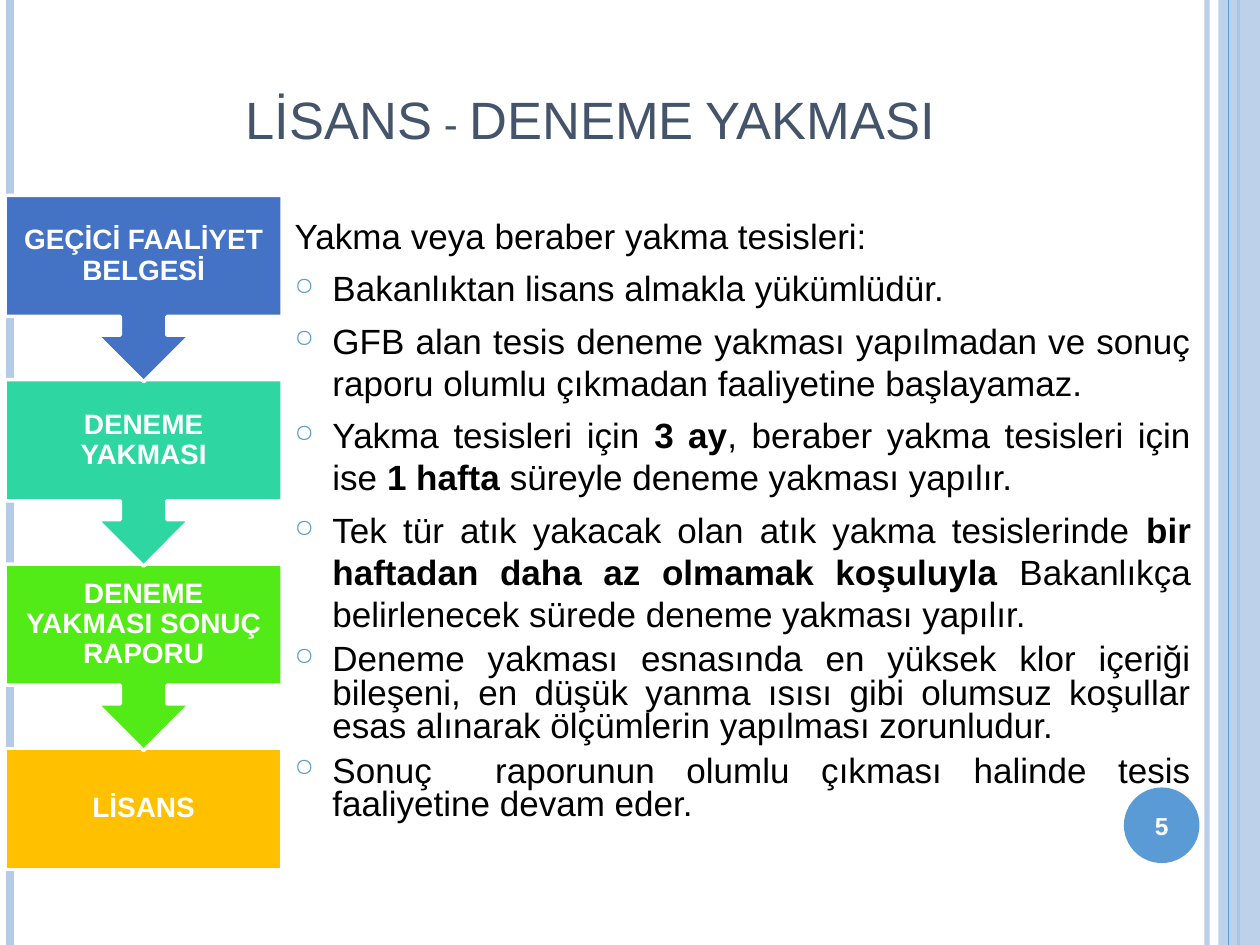
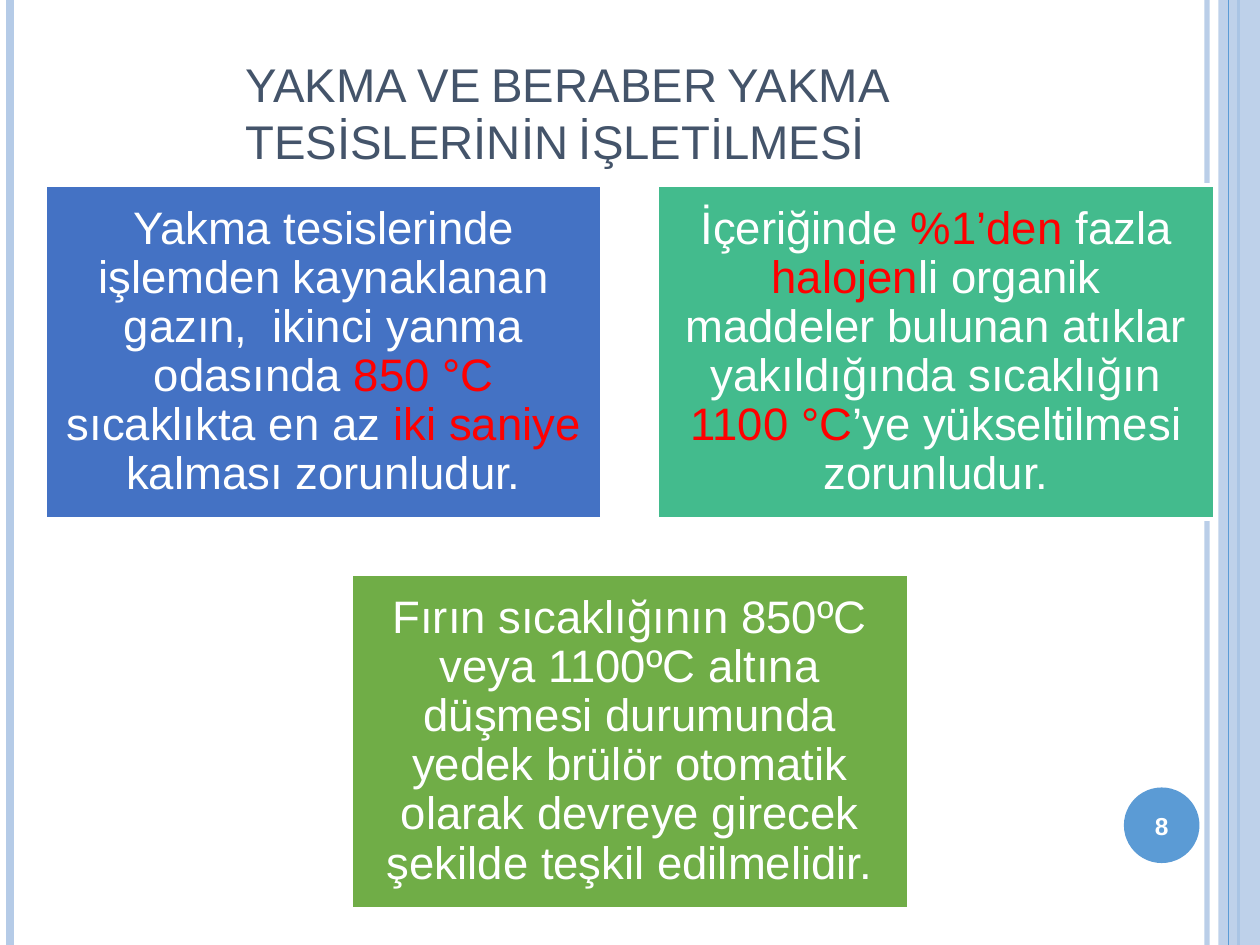
"""Builds two slides on the licensing and running of waste incineration plants."""
from lxml.etree import SubElement
from pptx import Presentation
from pptx.dml.color import RGBColor as Rgb
from pptx.enum.shapes import MSO_CONNECTOR as Conn, MSO_SHAPE as Kind
from pptx.enum.text import MSO_ANCHOR as Anchor, PP_ALIGN as Align
from pptx.oxml.ns import qn
from pptx.util import Inches, Pt

WHITE = Rgb(0xFF, 0xFF, 0xFF)
BLACK = Rgb(0, 0, 0)
RED = Rgb(0xFF, 0, 0)
SLATE = Rgb(0x44, 0x54, 0x6A)
PALE = Rgb(0xB5, 0xCB, 0xE7)
SKY = Rgb(0x5B, 0x9B, 0xD5)
BLUE = Rgb(0x44, 0x72, 0xC4)
MINT = Rgb(0x2E, 0xD7, 0xA1)
LIME = Rgb(0x53, 0xEB, 0x17)
GOLD = Rgb(0xFF, 0xC0, 0x00)
TEAL = Rgb(0x43, 0xBB, 0x8D)
GREEN = Rgb(0x70, 0xAD, 0x47)
FONT = "Arial"
WIDE, HIGH = 10, 7.5

TRIAL = "LİSANS - DENEME YAKMASI"
STEPS = [
    ("GEÇİCİ FAALİYET BELGESİ", BLUE),
    ("DENEME YAKMASI", MINT),
    ("DENEME YAKMASI SONUÇ RAPORU", LIME),
    ("LİSANS", GOLD),
]
LEAD = "Yakma veya beraber yakma tesisleri:"
RULES = [
    (1, ["Bakanlıktan lisans almakla yükümlüdür."]),
    (1, ["GFB alan tesis deneme yakması yapılmadan ve sonuç raporu olumlu "
         "çıkmadan faaliyetine başlayamaz."]),
    (1, ["Yakma tesisleri için ", "3 ay", ", beraber yakma tesisleri için ise ",
         "1 hafta ", "süreyle deneme yakması yapılır."]),
    (1, ["Tek tür atık yakacak olan atık yakma tesislerinde ",
         "bir haftadan daha az olmamak koşuluyla",
         " Bakanlıkça belirlenecek sürede deneme yakması yapılır."]),
    (0.8, ["Deneme yakması esnasında en yüksek klor içeriği bileşeni, en düşük "
           "yanma ısısı gibi olumsuz koşullar esas alınarak ölçümlerin "
           "yapılması zorunludur."]),
    (0.8, ["Sonuç  raporunun olumlu çıkması halinde tesis faaliyetine devam eder."]),
]

RUNNING = "YAKMA VE BERABER YAKMA TESİSLERİNİN İŞLETİLMESİ"
CARDS = [
    (BLUE, ["Yakma tesislerinde işlemden kaynaklanan gazın,  ikinci yanma odasında ",
            "850 °C", " sıcaklıkta en az ", "iki saniye ", "kalması zorunludur."]),
    (TEAL, ["İçeriğinde ", "%1’den ", "fazla ", "halojen",
            "li organik maddeler bulunan atıklar yakıldığında sıcaklığın ",
            "1100 °C", "’ye yükseltilmesi zorunludur."]),
    (GREEN, ["Fırın sıcaklığının 850ºC veya 1100ºC altına düşmesi durumunda yedek "
             "brülör otomatik olarak devreye girecek şekilde teşkil edilmelidir."]),
]


def fade(part, share):
    """Make the solid colour inside a part partly clear."""
    tone = next(part._element.spPr.iter(qn("a:srgbClr")))
    SubElement(tone, qn("a:alpha"), val=str(share * 1000))


def add_run(para, text, size, tone, bold=False):
    """Add one run of text."""
    run = para.add_run()
    run.text = text
    font = run.font
    font.name, font.size, font.bold = FONT, Pt(size), bold
    font.color.rgb = tone
    return run


def add_box(slide, kind, spot, fill, edge=None):
    """Add a filled shape."""
    box = slide.shapes.add_shape(kind, *map(Inches, spot))
    box.shadow.inherit = False
    box.fill.solid()
    box.fill.fore_color.rgb = fill
    if edge:
        box.line.color.rgb = edge
        box.line.width = Pt(2)
    else:
        box.line.fill.background()
    return box


def set_pad(frame, pad):
    """Wrap and centre the text of a frame, with one inset on all sides."""
    frame.word_wrap = True
    frame.vertical_anchor = Anchor.MIDDLE
    frame.margin_left = frame.margin_right = Inches(pad)
    frame.margin_top = frame.margin_bottom = Inches(pad)
    para = frame.paragraphs[0]
    para.alignment = Align.CENTER
    return para


def add_line(slide, left, tone, width):
    """Add a line down the full height of the slide."""
    x = Inches(left)
    line = slide.shapes.add_connector(Conn.STRAIGHT, x, 0, x, Inches(HIGH))
    line.line.color.rgb = tone
    line.line.width = Pt(width)
    SubElement(line._element.spPr, qn("a:effectLst"))
    return line


def add_base(deck, title, top, size, number):
    """Add a slide with its bands, number and title."""
    slide = deck.slides.add_slide(deck.slide_layouts[6])
    fade(add_line(slide, 9.58, PALE, 3), 93)
    add_line(slide, 0.08, PALE, 4.5)
    add_line(slide, 9.83, SKY, 1.5)
    fade(add_box(slide, Kind.RECTANGLE, (9.67, 0, 0.33, HIGH), PALE), 87)
    add_line(slide, 9.75, SKY, 0.75)
    disc = add_box(slide, Kind.OVAL, (8.92, 6.25, 0.6, 0.6), SKY)
    add_run(set_pad(disc.text_frame, 0), number, 14, WHITE, True)
    spot = map(Inches, (1.85, top, 6.82, 0.95))
    frame = slide.shapes.add_textbox(*spot).text_frame
    frame.word_wrap = True
    frame.vertical_anchor = Anchor.BOTTOM
    run = add_run(frame.paragraphs[0], title, size, SLATE)
    run.font._element.set("cap", "small")
    return slide


def add_mark(para):
    """Give a paragraph a hanging ring bullet."""
    props = para._p.get_or_add_pPr()
    props.set("marL", str(Inches(0.3)))
    props.set("indent", str(Inches(-0.3)))
    tone = SubElement(props, qn("a:buClr"))
    SubElement(tone, qn("a:srgbClr"), val=str(SKY))
    SubElement(props, qn("a:buSzPct"), val="70000")
    SubElement(props, qn("a:buChar"), char="○")


def add_rules(slide):
    """Add the lead line and the bulleted rules."""
    spot = map(Inches, (2.24, 1.65, 7.31, 5.01))
    frame = slide.shapes.add_textbox(*spot).text_frame
    frame.word_wrap = True
    add_run(frame.paragraphs[0], LEAD, 20, BLACK)
    for gap, parts in RULES:
        para = frame.add_paragraph()
        para.alignment = Align.JUSTIFY
        para.line_spacing = gap
        para.space_before = Pt(6)
        add_mark(para)
        for i, text in enumerate(parts):
            add_run(para, text, 20, BLACK, i % 2 == 1)


def add_steps(slide):
    """Add the chain of steps, the last one at the back."""
    first, last = 1.55, 5.94
    end = len(STEPS) - 1
    pitch = (last - first) / end
    for i, (text, fill) in reversed(list(enumerate(STEPS))):
        kind, high = (Kind.DOWN_ARROW_CALLOUT, 1.48) if i < end else (Kind.RECTANGLE, 0.96)
        box = add_box(slide, kind, (0.04, first + i * pitch, 2.2, high), fill, WHITE)
        para = set_pad(box.text_frame, 0.12)
        para.line_spacing = 0.9
        add_run(para, text, 16, WHITE, True)


def add_cards(slide):
    """Add the cards two to a row, each row centred."""
    wide, high, gap, top, cols = 4.42, 2.65, 0.44, 1.47, 2
    for i, (fill, parts) in enumerate(CARDS):
        row, col = divmod(i, cols)
        count = min(cols, len(CARDS) - row * cols)
        left = (WIDE - count * wide - (count - 1) * gap) / 2
        spot = left + col * (wide + gap), top + row * (high + gap), wide, high
        box = add_box(slide, Kind.RECTANGLE, spot, fill, WHITE)
        para = set_pad(box.text_frame, 0.11)
        para.line_spacing = 0.9
        for j, text in enumerate(parts):
            add_run(para, text, 26, RED if j % 2 else WHITE)


def main():
    """Build and save the deck."""
    deck = Presentation()
    deck.slide_width, deck.slide_height = Inches(WIDE), Inches(HIGH)
    slide = add_base(deck, TRIAL, 0.29, 30, "5")
    add_rules(slide)
    add_steps(slide)
    add_cards(add_base(deck, RUNNING, 0.44, 27, "8"))
    deck.save("out.pptx")


if __name__ == "__main__":
    main()
